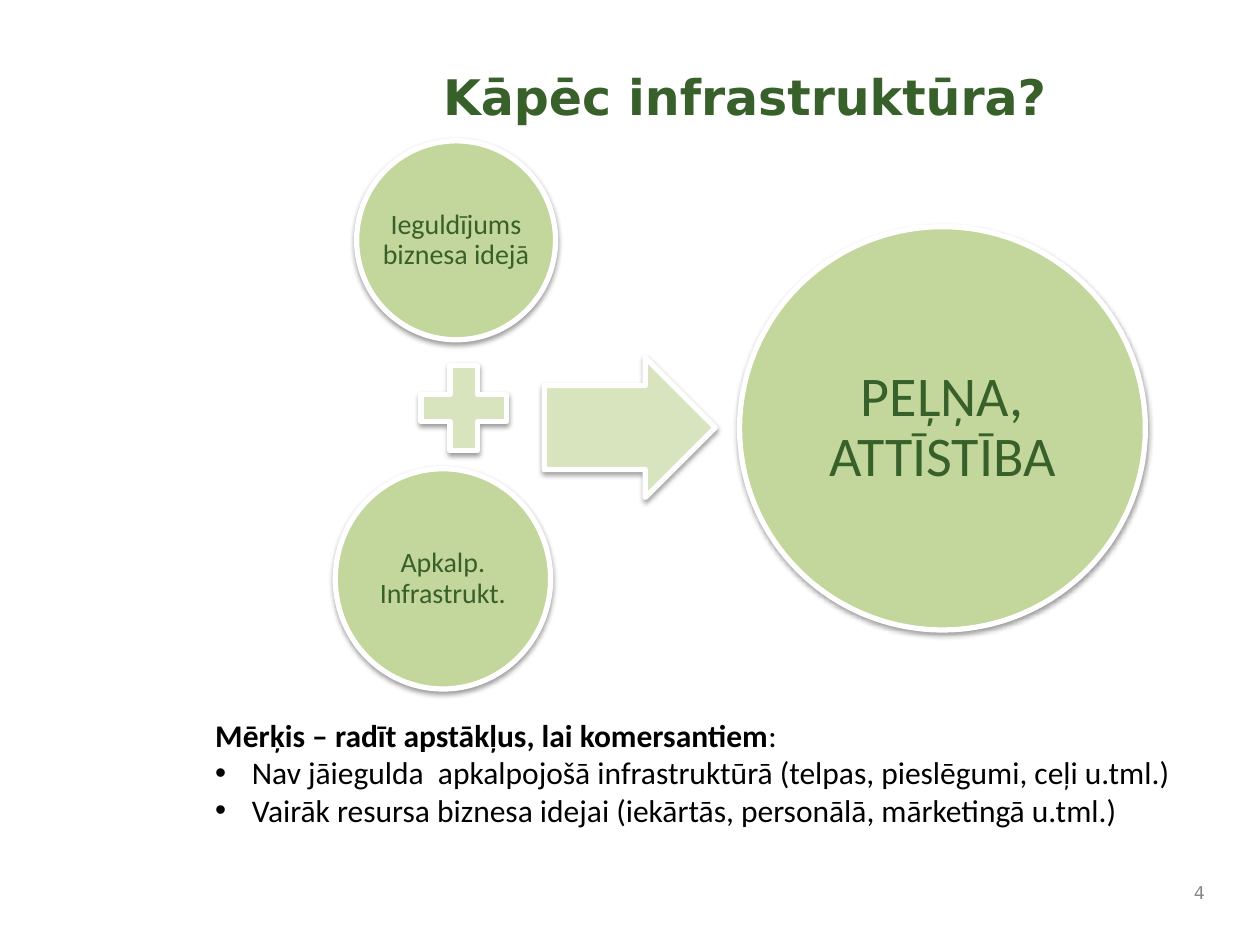
from lxml.etree import SubElement
from pptx import Presentation
from pptx.dml.color import RGBColor
from pptx.enum.shapes import MSO_SHAPE as Preset
from pptx.enum.text import MSO_ANCHOR as Anchor, PP_ALIGN as Align
from pptx.oxml.ns import qn
from pptx.util import Cm, Pt

DARK_GREEN = RGBColor(0x38, 0x60, 0x2A)
GREEN = RGBColor(0xC3, 0xD6, 0x9B)
PALE_GREEN = RGBColor(0xD7, 0xE4, 0xBD)
GREY = RGBColor(0x89, 0x89, 0x89)
BLACK = RGBColor(0, 0, 0)
WHITE = RGBColor(0xFF, 0xFF, 0xFF)
HEADING_FONT = "DejaVu Sans"
BODY_FONT = "Calibri"


class SlideBuilder:
    def __init__(self, presentation):
        self.slide = presentation.slides.add_slide(presentation.slide_layouts[5])

    def format_font(self, font, size, color, name=BODY_FONT, bold=False):
        font.name, font.size, font.bold = name, Pt(size), bold
        font.color.rgb = color

    def title(self, text, box):
        title = self.slide.shapes.title
        title.left, title.top, title.width, title.height = map(Cm, box)
        frame = title.text_frame
        frame.text = text
        frame.vertical_anchor = Anchor.TOP
        paragraph = frame.paragraphs[0]
        paragraph.alignment = Align.CENTER
        self.format_font(paragraph.runs[0].font, 28, DARK_GREEN, HEADING_FONT, True)

    def shape(self, preset, box, fill):
        shape = self.slide.shapes.add_shape(preset, *map(Cm, box))
        shape.fill.solid()
        shape.fill.fore_color.rgb = fill
        shape.line.color.rgb = WHITE
        shape.line.width = Pt(3)
        self.soft_shadow(shape)
        return shape

    def soft_shadow(self, shape):
        shape.shadow.inherit = False
        effects = shape._element.spPr.find(qn("a:effectLst"))
        shadow = SubElement(effects, qn("a:outerShdw"), blurRad=str(Pt(3.1)),
                            dist=str(Pt(1.6)), dir="5400000", rotWithShape="0")
        color = SubElement(shadow, qn("a:srgbClr"), val="000000")
        SubElement(color, qn("a:alpha"), val="38000")

    def circle(self, text, box, size):
        frame = self.shape(Preset.OVAL, box, GREEN).text_frame
        frame.text = text
        frame.word_wrap = False
        frame.vertical_anchor = Anchor.MIDDLE
        paragraph = frame.paragraphs[0]
        paragraph.alignment = Align.CENTER
        paragraph.line_spacing = 0.9
        for run in paragraph.runs:
            self.format_font(run.font, size, DARK_GREEN)

    def text_box(self, box):
        frame = self.slide.shapes.add_textbox(*map(Cm, box)).text_frame
        frame.word_wrap = True
        return frame

    def goal(self, heading, bullets, box):
        frame = self.text_box(box)
        paragraph = frame.paragraphs[0]
        for text, bold in ((heading, True), (":", False)):
            run = paragraph.add_run()
            run.text = text
            self.format_font(run.font, 18, BLACK, bold=bold)
        for text in bullets:
            paragraph = frame.add_paragraph()
            paragraph.text = text
            properties = paragraph._p.get_or_add_pPr()
            properties.set("marL", str(Cm(0.74)))
            properties.set("indent", str(-Cm(0.74)))
            SubElement(properties, qn("a:buFont"), typeface="Arial")
            SubElement(properties, qn("a:buChar"), char="•")
            self.format_font(paragraph.runs[0].font, 18, BLACK)

    def slide_number(self, number, box):
        frame = self.text_box(box)
        frame.text = number
        frame.vertical_anchor = Anchor.MIDDLE
        paragraph = frame.paragraphs[0]
        paragraph.alignment = Align.RIGHT
        self.format_font(paragraph.runs[0].font, 10, GREY, HEADING_FONT)


def main():
    presentation = Presentation()
    presentation.slide_width, presentation.slide_height = Cm(25.4), Cm(19.05)
    builder = SlideBuilder(presentation)

    builder.title("Kāpēc infrastruktūra?", (4.62, 1.22, 20.78, 2.77))

    # Investment plus infrastructure leads to profit
    builder.circle("Ieguldījums\vbiznesa idejā", (7.19, 2.84, 4.01, 4.01), 16)
    builder.shape(Preset.MATH_PLUS, (8.18, 7.06, 2.34, 2.34), PALE_GREEN)
    builder.circle("Apkalp.\vInfrastrukt.", (6.76, 9.45, 4.34, 4.44), 16)
    arrow = builder.shape(Preset.RIGHT_ARROW, (10.97, 7.21, 3.45, 2.82), PALE_GREEN)
    arrow.adjustments[0] = 0.6
    builder.circle("PEĻŅA,\vATTĪSTĪBA", (14.91, 4.57, 8.18, 8.13), 32)

    # Goal and slide number
    builder.goal(
        "Mērķis – radīt apstākļus, lai komersantiem",
        ("Nav jāiegulda  apkalpojošā infrastruktūrā (telpas, pieslēgumi, ceļi u.tml.)",
         "Vairāk resursa biznesa idejai (iekārtās, personālā, mārketingā u.tml.)"),
        (4.09, 14.3, 20.17, 2.57))
    builder.slide_number("4", (23.7, 17.58, 0.84, 0.84))

    presentation.save("out.pptx")


if __name__ == "__main__":
    main()
